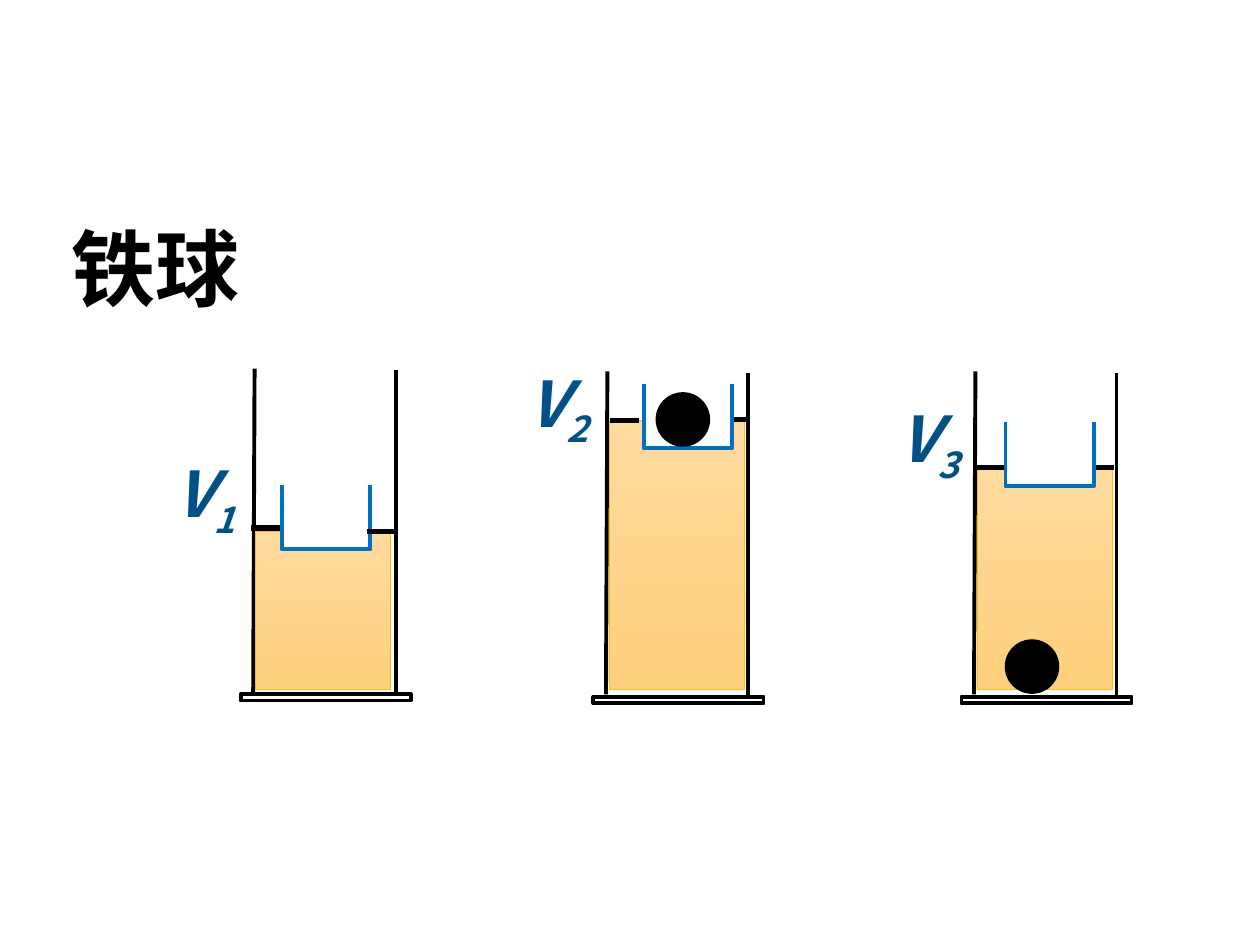
from lxml import etree
from pptx import Presentation
from pptx.dml.color import RGBColor
from pptx.enum import shapes as kinds, text as txt
from pptx.oxml import ns
from pptx.util import Pt

BLACK = RGBColor(0x00, 0x00, 0x00)
WHITE = RGBColor(0xFF, 0xFF, 0xFF)
CUP_BLUE = RGBColor(0x00, 0x70, 0xC0)
LABEL_BLUE = RGBColor(0x00, 0x51, 0x88)
LIQUID_EDGE = RGBColor(0xFF, 0xC0, 0x00)
LIQUID_TOP = RGBColor(0xFF, 0xDB, 0x9E)
LIQUID_BOTTOM = RGBColor(0xFF, 0xD0, 0x7C)

TITLE_FONT = {"name": "Calibri", "size": Pt(48), "bold": True}
LABEL_FONT = {"name": "Noto Sans CJK SC", "size": Pt(36), "bold": True, "italic": True}
RECT = kinds.MSO_SHAPE.RECTANGLE
LIQUID_FLOOR = 393.9

# One entry per cylinder; lengths in points, "mark" as (x, y) of its left end
CYLINDERS = [
    dict(number="1", base=(137.5, 396.7), liquid=(146.2, 303.8),
         marks=[(143.3, 301.7), (209.5, 303.8)], marks_in_front=True,
         cup=(161.3, 272.9), cover_x=156.2, label=(92.9, 256.3), ball=None),
    dict(number="2", base=(339.1, 398.2), liquid=(348.5, 240.5),
         marks=[(348.5, 240.5), (411.1, 239.8)], marks_in_front=False,
         cup=(367.9, 215.3), cover_x=361.4, label=(294.5, 204.5), ball=(375.1, 224.6)),
    dict(number="3", base=(549.4, 398.2), liquid=(558.7, 268.2),
         marks=[(557.3, 267.1), (619.9, 267.1)], marks_in_front=False,
         cup=(574.6, 236.9), cover_x=571.0, label=(506.2, 224.6), ball=(574.6, 365.8)),
]


def add_part(parent, kind, box, fill, edge, weight):
    part = parent.shapes.add_shape(kind, *map(Pt, box))
    part.shadow.inherit = False
    if fill is not None:
        part.fill.solid()
        part.fill.fore_color.rgb = fill
    part.line.color.rgb = edge
    part.line.width = Pt(weight)
    return part


def add_stroke(parent, ends, weight):
    stroke = parent.shapes.add_connector(kinds.MSO_CONNECTOR.STRAIGHT, *map(Pt, ends))
    stroke.line.color.rgb = BLACK
    stroke.line.width = Pt(weight)
    etree.SubElement(stroke._element.spPr, ns.qn("a:effectLst"))


prs = Presentation()
prs.slide_width, prs.slide_height = Pt(720), Pt(540)
slide = prs.slides.add_slide(prs.slide_layouts[6])

# Title
title = slide.shapes.add_textbox(Pt(33.8), Pt(120.2), Pt(136.8), Pt(65.5))
title.text_frame.word_wrap = True
title.text_frame.auto_size = txt.MSO_AUTO_SIZE.SHAPE_TO_FIT_TEXT
heading = title.text_frame.paragraphs[0].add_run()
heading.text = "铁球"
heading.font.color.rgb = BLACK
for key, value in TITLE_FONT.items():
    setattr(heading.font, key, value)

for cylinder in CYLINDERS:
    vessel = slide.shapes.add_group_shape()

    # Base and walls
    base_x, base_y = cylinder["base"]
    add_part(vessel, RECT, (base_x, base_y, 97.2, 3.6), WHITE, BLACK, 2.25)
    add_stroke(vessel, (base_x + 7.2, base_y - 1.4, base_x + 8, base_y - 186), 2.25)
    add_stroke(vessel, (base_x + 88.6, base_y, base_x + 88.6, base_y - 185), 2.25)

    # Liquid
    liquid_x, level = cylinder["liquid"]
    liquid = add_part(vessel, RECT, (liquid_x, level, 77, LIQUID_FLOOR - level),
                      None, LIQUID_EDGE, 0.5)
    liquid.fill.gradient()
    liquid.fill.gradient_angle = 270
    for stop, shade in zip(liquid.fill.gradient_stops, (LIQUID_TOP, LIQUID_BOTTOM)):
        stop.color.rgb = shade

    # Volume label
    label_x, label_y = cylinder["label"]
    label = vessel.shapes.add_textbox(Pt(label_x), Pt(label_y), Pt(77.8), Pt(51.1))
    label.text_frame.word_wrap = True
    label.text_frame.auto_size = txt.MSO_AUTO_SIZE.SHAPE_TO_FIT_TEXT
    for symbol in ("V", cylinder["number"]):
        run = label.text_frame.paragraphs[0].add_run()
        run.text = symbol
        run.font.color.rgb = LABEL_BLUE
        for key, value in LABEL_FONT.items():
            setattr(run.font, key, value)
    run._r.get_or_add_rPr().set("baseline", "-25000")

    # Level marks and the open cup, whose top edge is covered in white
    cup_x, cup_y = cylinder["cup"]
    for layer in ("cup", "marks") if cylinder["marks_in_front"] else ("marks", "cup"):
        if layer == "marks":
            for mark_x, mark_y in cylinder["marks"]:
                add_stroke(vessel, (mark_x, mark_y, mark_x + 16.7, mark_y), 3)
        else:
            add_part(vessel, RECT, (cup_x, cup_y, 50.4, 41), None, CUP_BLUE, 2.25)
            cup = vessel.shapes[-1]
            cup.fill.solid()
            cup.fill.fore_color.rgb = WHITE
            add_part(vessel, RECT, (cylinder["cover_x"], cup_y - 13, 59, 16.6),
                     WHITE, WHITE, 1)

    # Iron ball
    if cylinder["ball"]:
        add_part(vessel, kinds.MSO_SHAPE.OVAL, (*cylinder["ball"], 30.2, 30.2),
                 BLACK, BLACK, 1)

prs.save("out.pptx")
